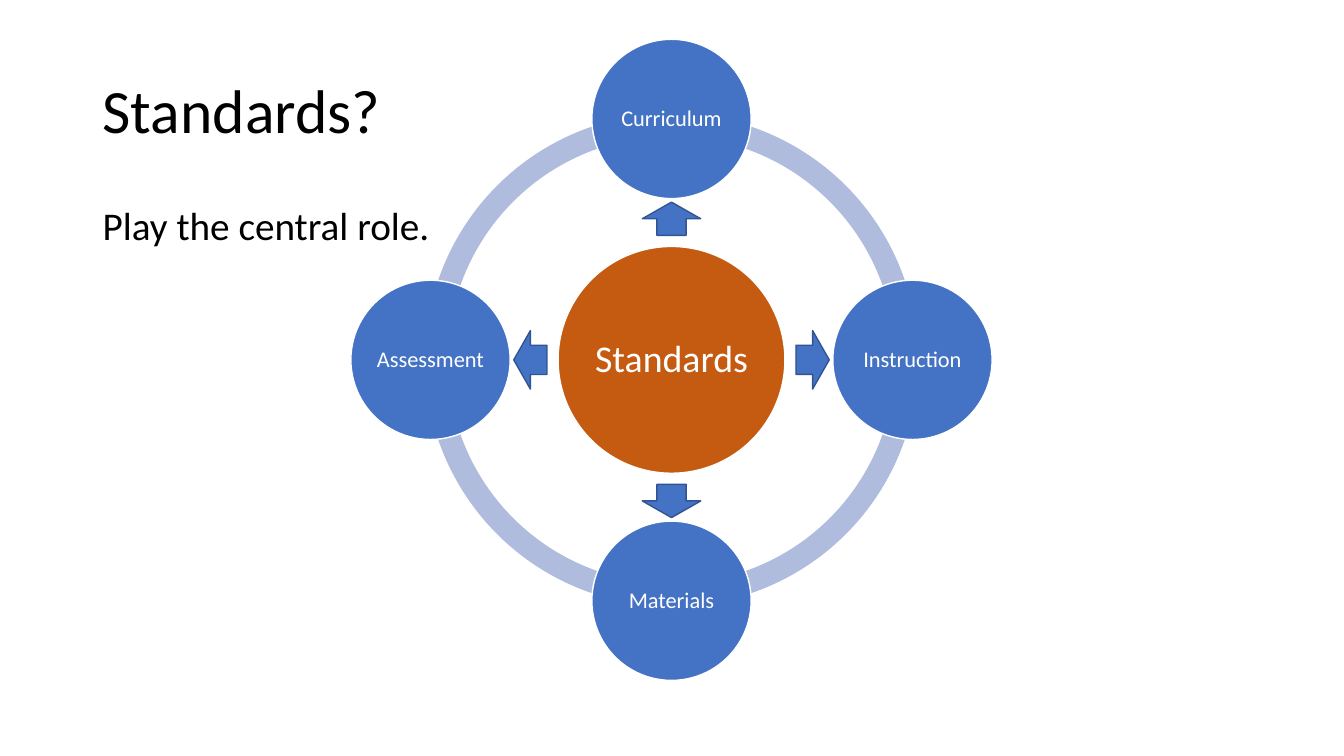
import pptx
import pptx.util
import pptx.dml.color
import pptx.enum.shapes
import pptx.enum.text

PX = 9144
MID = (666, 357)
REACH = 239
SHAPE = pptx.enum.shapes.MSO_SHAPE
ALIGN = pptx.enum.text.PP_ALIGN
ANCHOR = pptx.enum.text.MSO_ANCHOR
BLUE, ORANGE, WHITE, BLACK = "4472C4", "C55A11", "FFFFFF", "000000"
RING, EDGE = "B0BCDE", "325491"
TOPICS = [
    ("Curriculum", (0, -1), 270),
    ("Instruction", (1, 0), 0),
    ("Materials", (0, 1), 90),
    ("Assessment", (-1, 0), 180),
]


def px(count):
    """Turn a length in px into EMU."""
    return pptx.util.Emu(round(count * PX))


def color(code):
    """Turn a hex string into a colour."""
    return pptx.dml.color.RGBColor.from_string(code)


def write(frame, text, size, ink, align, anchor, inset, wrap):
    """Put one line of text into a frame."""
    frame.word_wrap = wrap
    frame.vertical_anchor = anchor
    frame.margin_left = frame.margin_right = px(inset[0])
    frame.margin_top = frame.margin_bottom = px(inset[1])
    para = frame.paragraphs[0]
    para.alignment = align
    para.line_spacing = 0.9
    run = para.add_run()
    run.text = text
    run.font.size = pptx.util.Pt(size)
    run.font.name = "Calibri"
    run.font.color.rgb = color(ink)


def centred(slide, kind, mid, size, fill, line=None):
    """Draw a preset shape around a middle point."""
    (x, y), (wide, high) = mid, size
    shape = slide.shapes.add_shape(
        kind, px(x - wide / 2), px(y - high / 2), px(wide), px(high))
    shape.shadow.inherit = False
    shape.fill.solid()
    shape.fill.fore_color.rgb = color(fill)
    if line:
        shape.line.color.rgb = color(line)
        shape.line.width = pptx.util.Pt(1)
    else:
        shape.line.fill.background()
    return shape


def ring(slide):
    """Draw the ring as four quarter arcs."""
    for start in (108, 54, 0, 162):
        arc = centred(slide, SHAPE.BLOCK_ARC, MID, (489, 489), RING)
        arc.adjustments[0] = start
        arc.adjustments[1] = (start + 54) % 216
        arc.adjustments[2] = 0.046


def disc(slide, text, mid, wide, fill, size):
    """Draw a circle with a label on one line."""
    shape = centred(slide, SHAPE.OVAL, mid, (wide, wide), fill, WHITE)
    write(shape.text_frame, text, size, WHITE, ALIGN.CENTER, ANCHOR.MIDDLE,
          (0, 0), False)


def arrow(slide, mid, turn):
    """Draw a block arrow turned outwards."""
    shape = centred(slide, SHAPE.RIGHT_ARROW, mid, (33, 58), BLUE, EDGE)
    shape.rotation = turn


def label(slide, text, top, high, size, anchor):
    """Add a full-width text box."""
    box = slide.shapes.add_textbox(px(92), px(top), px(1150), px(high))
    write(box.text_frame, text, size, BLACK, ALIGN.LEFT, anchor, (10, 5),
          True)


def toward(step, reach):
    """Find the point a given reach from the middle."""
    return tuple(m + s * reach for m, s in zip(MID, step))


def main():
    """Build and save the slide."""
    deck = pptx.Presentation()
    deck.slide_width, deck.slide_height = px(1333), px(750)
    slide = deck.slides.add_slide(deck.slide_layouts[6])
    ring(slide)
    disc(slide, "Standards", MID, 225, ORANGE, 27)
    for name, step, _ in TOPICS:
        disc(slide, name, toward(step, REACH), 158, BLUE, 16)
    label(slide, "Standards?", 40, 145, 44, ANCHOR.MIDDLE)
    label(slide, "Play the central role.", 200, 476, 28, ANCHOR.TOP)
    for _, step, turn in TOPICS:
        arrow(slide, toward(step, 140), turn)
    deck.save("out.pptx")


if __name__ == "__main__":
    main()
